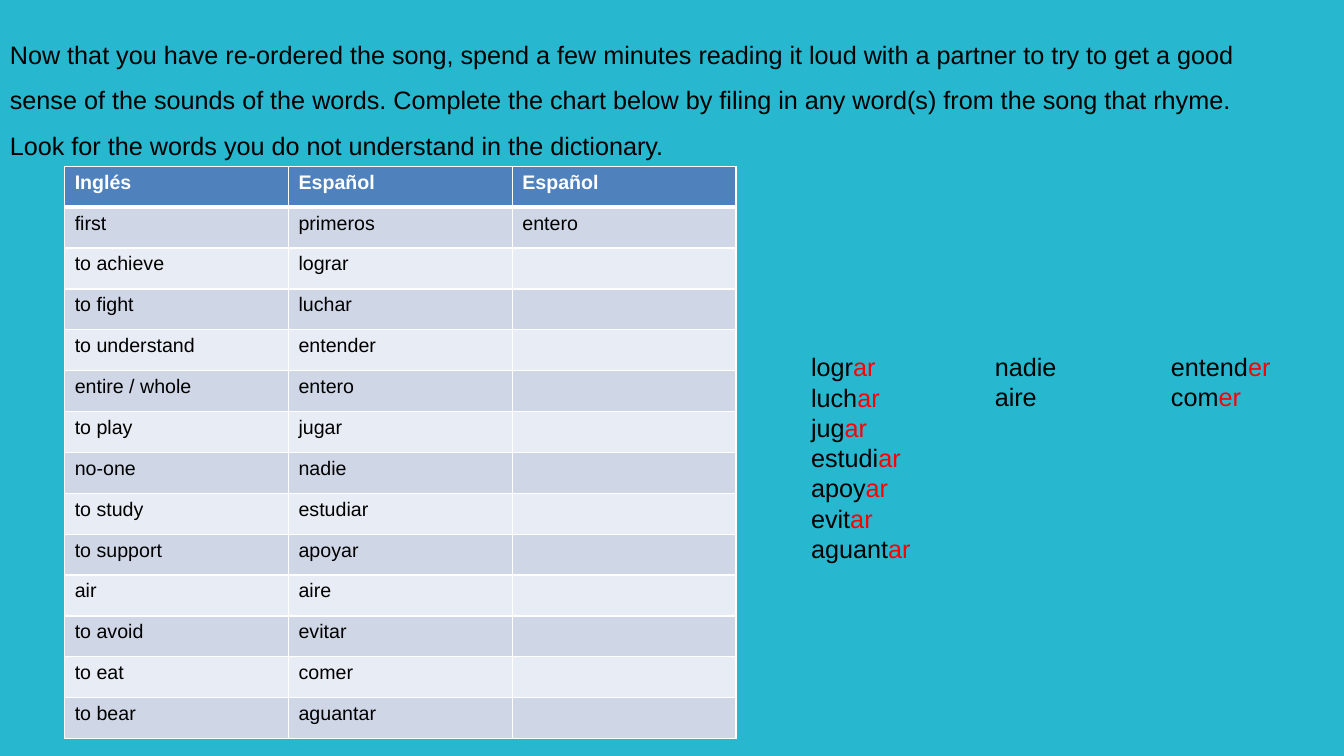
import dataclasses

import pptx
import pptx.dml.color
import pptx.enum.text
import pptx.oxml.ns
import pptx.slide
import pptx.table
import pptx.text.text
import pptx.util
from lxml import etree
from pptx.util import Cm

FONT = "Arial"
BLACK, WHITE, RED = "000000", "FFFFFF", "FF0000"
HEADER_FILL, BAND_FILLS = "4F81BD", ("E8ECF4", "CFD7E7")
ROW_HEIGHT, COLUMN_WIDTH = Cm(1.03), Cm(5.64)

INSTRUCTIONS = (
    "Now that you have re-ordered the song, spend a few minutes reading it loud "
    "with a partner to try to get a good sense of the sounds of the words. "
    "Complete the chart below by filing in any word(s) from the song that rhyme. "
    "Look for the words you do not understand in the dictionary."
)

VOCABULARY = [
    ("Inglés", "Español", "Español"),
    ("first", "primeros", "entero"),
    ("to achieve", "lograr", ""),
    ("to fight", "luchar", ""),
    ("to understand", "entender", ""),
    ("entire / whole", "entero", ""),
    ("to play", "jugar", ""),
    ("no-one", "nadie", ""),
    ("to study", "estudiar", ""),
    ("to support", "apoyar", ""),
    ("air", "aire", ""),
    ("to avoid", "evitar", ""),
    ("to eat", "comer", ""),
    ("to bear", "aguantar", ""),
]


@dataclasses.dataclass
class RhymeGroup:
    left: float
    top: float
    width: float
    height: float
    stems: list[str]
    ending: str = ""


RHYME_GROUPS = [
    RhymeGroup(20.19, 8.74, 3.05, 5.64,
               ["logr", "luch", "jug", "estudi", "apoy", "evit", "aguant"], "ar"),
    RhymeGroup(24.82, 8.72, 2.08, 1.8, ["nadie", "aire"]),
    RhymeGroup(29.26, 8.72, 3.05, 1.8, ["entend", "com"], "er"),
]


def rgb(color: str) -> pptx.dml.color.RGBColor:
    return pptx.dml.color.RGBColor.from_string(color)


def format_run(r: pptx.text.text._Run, size: float, color: str = BLACK,
               bold: bool = False) -> None:
    r.font.name = FONT
    r.font.size = pptx.util.Pt(size)
    r.font.bold = bold
    r.font.color.rgb = rgb(color)


def add_text_box(s: pptx.slide.Slide, left: float, top: float, width: float,
                 height: float, text: str) -> pptx.text.text.TextFrame:
    sp = s.shapes.add_textbox(Cm(left), Cm(top), Cm(width), Cm(height))
    tf = sp.text_frame
    tf.word_wrap = True
    tf.auto_size = pptx.enum.text.MSO_AUTO_SIZE.SHAPE_TO_FIT_TEXT
    tf.text = text
    for p in tf.paragraphs:
        for r in p.runs:
            format_run(r, 18)
    return tf


def add_rhyme_group(s: pptx.slide.Slide, group: RhymeGroup) -> None:
    tf = add_text_box(s, group.left, group.top, group.width, group.height,
                      "\n".join(group.stems))
    if group.ending:
        for p in tf.paragraphs:
            r = p.add_run()
            r.text = group.ending
            format_run(r, 18, RED)


def set_borders(cell: pptx.table._Cell, row: int) -> None:
    widths = {"lnL": 1, "lnR": 1, "lnT": 3 if row == 1 else 1,
              "lnB": 3 if row == 0 else 1}
    qn = pptx.oxml.ns.qn
    tcPr = cell._tc.get_or_add_tcPr()
    for side, width in widths.items():
        ln = etree.SubElement(tcPr, qn(f"a:{side}"), w=str(pptx.util.Pt(width)))
        fill = etree.SubElement(ln, qn("a:solidFill"))
        etree.SubElement(fill, qn("a:srgbClr"), val=WHITE)


def add_vocabulary_table(s: pptx.slide.Slide) -> None:
    rows, columns = len(VOCABULARY), len(VOCABULARY[0])
    table = s.shapes.add_table(rows, columns, Cm(1.63), Cm(4.19),
                               COLUMN_WIDTH * columns, ROW_HEIGHT * rows).table
    for column in table.columns:
        column.width = COLUMN_WIDTH
    for i, words in enumerate(VOCABULARY):
        table.rows[i].height = ROW_HEIGHT
        header = i == 0
        for j, word in enumerate(words):
            cell = table.cell(i, j)
            set_borders(cell, i)
            cell.fill.solid()
            cell.fill.fore_color.rgb = rgb(HEADER_FILL if header else BAND_FILLS[i % 2])
            if word:
                cell.text_frame.text = word
                format_run(cell.text_frame.paragraphs[0].runs[0], 14,
                           WHITE if header else BLACK, header)


def main() -> None:
    prs = pptx.Presentation()
    prs.slide_width, prs.slide_height = Cm(33.87), Cm(19.05)
    s = prs.slides.add_slide(prs.slide_layouts[6])
    s.background.fill.solid()
    s.background.fill.fore_color.rgb = rgb("27B8CF")

    tf = add_text_box(s, 0, 0.48, 31.62, 3.71, INSTRUCTIONS)
    tf.paragraphs[0].line_spacing = 1.5
    add_vocabulary_table(s)
    for group in RHYME_GROUPS:
        add_rhyme_group(s, group)
    prs.save("out.pptx")


if __name__ == "__main__":
    main()
